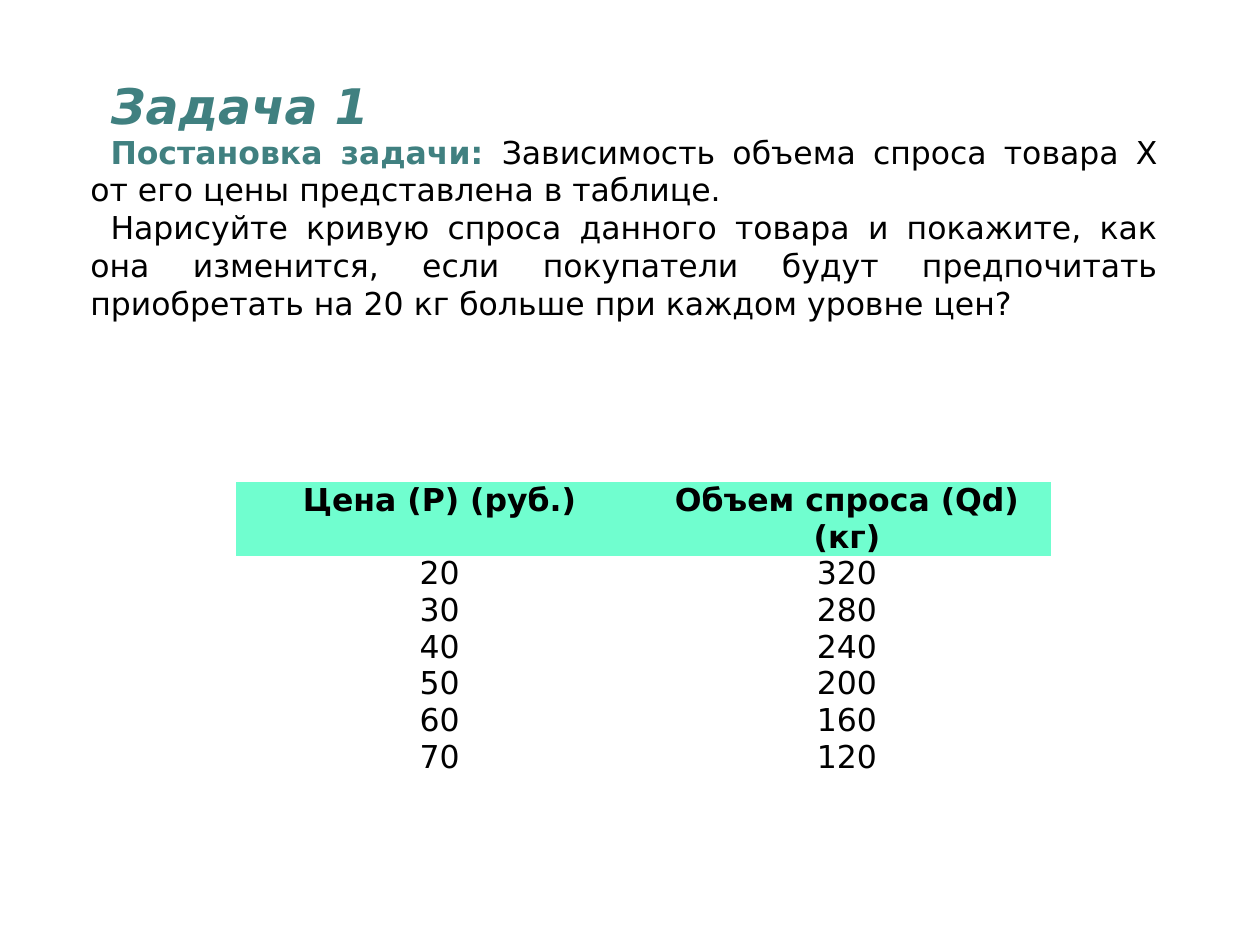
"""Build the demand-curve exercise slide with its price and quantity table."""
from dataclasses import dataclass

from pptx import Presentation
from pptx.dml.color import RGBColor
from pptx.enum.text import MSO_ANCHOR, MSO_AUTO_SIZE, PP_ALIGN
from pptx.oxml.ns import qn
from pptx.util import Pt


@dataclass(frozen=True)
class Theme:
    font: str = "DejaVu Sans"
    accent: RGBColor = RGBColor(0x40, 0x80, 0x80)
    text: RGBColor = RGBColor(0, 0, 0)
    header: RGBColor = RGBColor(0x70, 0xFE, 0xCF)
    title_size: float = 28
    body_size: float = 18
    no_grid: str = "{2D5ABB26-0587-4C30-8999-92F81FD0307C}"


THEME = Theme()
TITLE = "Задача 1"
LEAD = "Постановка задачи: "
STATEMENT = [
    [LEAD, "Зависимость объема спроса товара Х от его цены представлена в таблице."],
    ["Нарисуйте кривую спроса данного товара и покажите, как она изменится, "
     "если покупатели будут предпочитать приобретать на 20 кг больше при каждом уровне цен?"],
]
DEMAND = [
    ("Цена (Р) (руб.)", "Объем спроса (Qd) (кг)"),
    ("20", "320"),
    ("30", "280"),
    ("40", "240"),
    ("50", "200"),
    ("60", "160"),
    ("70", "120"),
]

LEFT, TOP, WIDTH = 44.6, 39.6, 624.2
TITLE_HEIGHT, STATEMENT_HEIGHT = 36.2, 114.3
INDENT = 11.5
TABLE_LEFT, TABLE_TOP = 134.8, 275.6
COLUMN_WIDTH, LINE_HEIGHT = 232.8, 20.95


def style(run, size, color, bold=False, italic=False):
    font = run.font
    font.name, font.size = THEME.font, Pt(size)
    font.bold, font.italic = bold, italic
    font.color.rgb = color


def prepare(frame, top_inset, bottom_inset):
    frame.word_wrap = True
    frame.auto_size = MSO_AUTO_SIZE.NONE
    frame.vertical_anchor = MSO_ANCHOR.TOP
    frame.margin_left = frame.margin_right = Pt(7.2)
    frame.margin_top, frame.margin_bottom = Pt(top_inset), Pt(bottom_inset)


def justify(paragraph):
    paragraph.alignment = PP_ALIGN.JUSTIFY
    properties = paragraph._p.get_or_add_pPr()
    properties.set("marL", "0")
    properties.set("indent", str(Pt(INDENT)))


def add_title(slide):
    title = slide.shapes.title
    title.left, title.top = Pt(LEFT), Pt(TOP)
    title.width, title.height = Pt(WIDTH), Pt(TITLE_HEIGHT)
    prepare(title.text_frame, 3.6, 0)
    title.text_frame.text = TITLE
    heading = title.text_frame.paragraphs[0]
    justify(heading)
    style(heading.runs[0], THEME.title_size, THEME.accent, bold=True, italic=True)


def add_statement(slide):
    frame = slide.shapes.add_textbox(
        Pt(LEFT), Pt(TOP + TITLE_HEIGHT), Pt(WIDTH), Pt(STATEMENT_HEIGHT)).text_frame
    prepare(frame, 0, 3.6)
    for index, parts in enumerate(STATEMENT):
        paragraph = frame.add_paragraph() if index else frame.paragraphs[0]
        justify(paragraph)
        for part in parts:
            run = paragraph.add_run()
            run.text = part
            is_lead = part == LEAD
            style(run, THEME.body_size, THEME.accent if is_lead else THEME.text, bold=is_lead)


def add_demand_table(slide):
    rows, columns = len(DEMAND), len(DEMAND[0])
    frame = slide.shapes.add_table(
        rows, columns, Pt(TABLE_LEFT), Pt(TABLE_TOP),
        Pt(columns * COLUMN_WIDTH), Pt((rows + 1) * LINE_HEIGHT))
    table = frame.table
    table.horz_banding = False
    frame._element.find(".//" + qn("a:tableStyleId")).text = THEME.no_grid
    for column in table.columns:
        column.width = Pt(COLUMN_WIDTH)
    for row_index, values in enumerate(DEMAND):
        is_header = row_index == 0
        table.rows[row_index].height = Pt(LINE_HEIGHT * (2 if is_header else 1))
        for cell, value in zip(table.rows[row_index].cells, values):
            cell.margin_left = cell.margin_right = cell.margin_top = cell.margin_bottom = 0
            if is_header:
                cell.fill.solid()
                cell.fill.fore_color.rgb = THEME.header
            else:
                cell.fill.background()
            cell.text_frame.text = value
            paragraph = cell.text_frame.paragraphs[0]
            paragraph.alignment = PP_ALIGN.CENTER
            style(paragraph.runs[0], THEME.body_size, THEME.text, bold=is_header)


def main():
    deck = Presentation()
    deck.slide_width, deck.slide_height = Pt(720), Pt(540)
    slide = deck.slides.add_slide(deck.slide_layouts[5])
    add_title(slide)
    add_statement(slide)
    add_demand_table(slide)
    deck.save("out.pptx")


if __name__ == "__main__":
    main()
